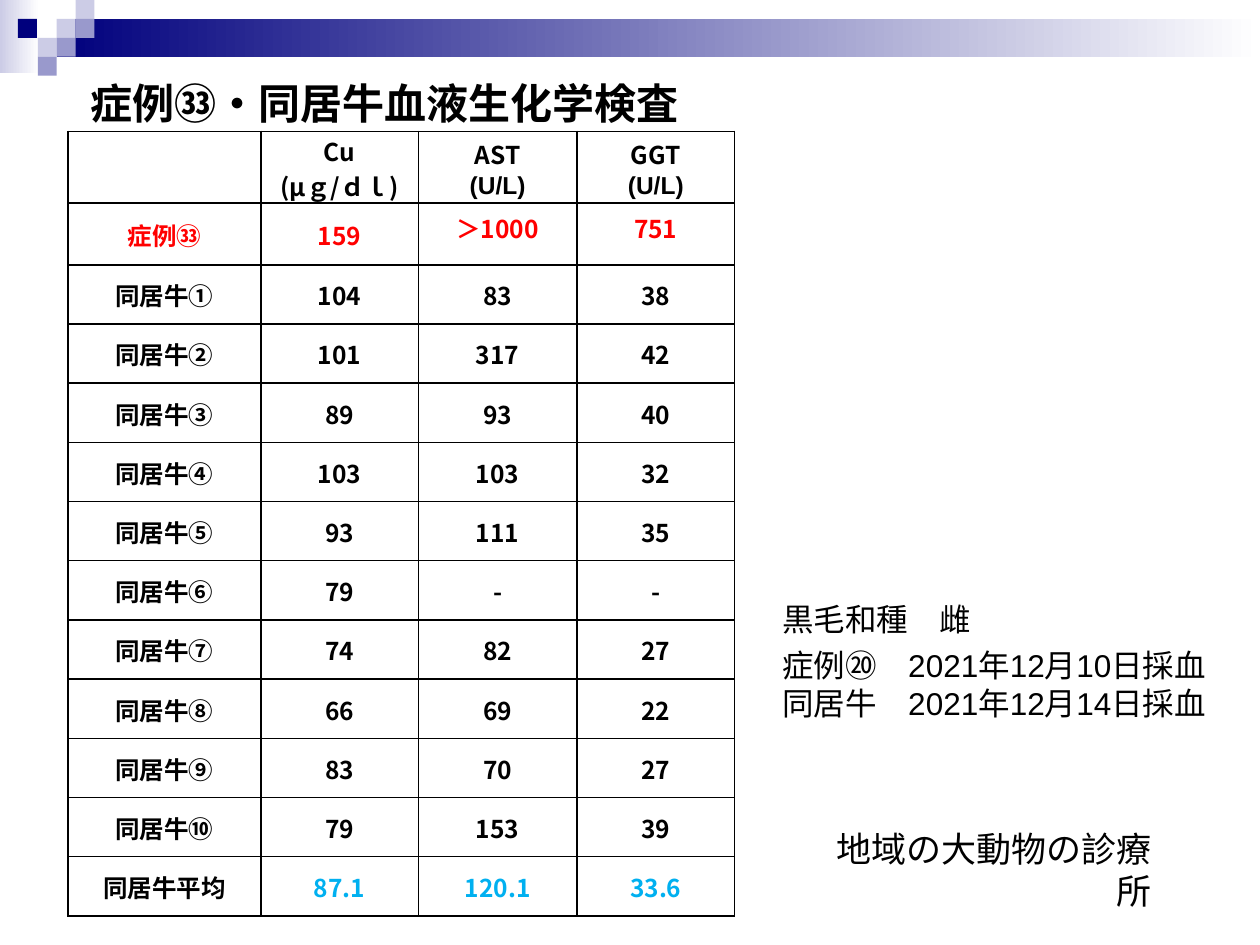
import pptx
import pptx.util
import pptx.dml.color
import pptx.enum.shapes
import pptx.enum.text
import pptx.oxml
import pptx.oxml.ns

COLORS = {"navy": "00007D", "violet": "9999CC", "lilac": "CCCCE6",
          "white": "FFFFFF", "black": "000000", "red": "FF0000", "blue": "00B0F0"}
CJK = "Noto Sans CJK JP"
ALIGN = pptx.enum.text.PP_ALIGN
ANCHOR = pptx.enum.text.MSO_ANCHOR

deck = pptx.Presentation()
deck.slide_width = pptx.util.Inches(10)
deck.slide_height = pptx.util.Inches(7.5)
page = deck.slides.add_slide(deck.slide_layouts[6])


def share(left, top, width, height):
    """Turn shares of the slide's size into lengths."""
    wide, high = deck.slide_width, deck.slide_height
    return int(left * wide), int(top * high), int(width * wide), int(height * high)


def write(frame, lines, size, color, align=ALIGN.LEFT, bold=False):
    """Fill a text frame with (text, latin font) lines."""
    for number, (text, font) in enumerate(lines):
        para = frame.add_paragraph() if number else frame.paragraphs[0]
        para.alignment = align
        span = para.add_run()
        span.text = text
        look = {"name": font, "size": pptx.util.Pt(size), "bold": bold}
        for key, value in look.items():
            setattr(span.font, key, value)
        span.font.color.rgb = pptx.dml.color.RGBColor.from_string(COLORS[color])
        east = pptx.oxml.parse_xml(
            f'<a:ea {pptx.oxml.ns.nsdecls("a")} typeface="{CJK}"/>')
        span.font._element.find(pptx.oxml.ns.qn("a:latin")).addnext(east)


# Header band and mosaic, on a grid of 0.15 inch: column, row, width, height, colours
TILE = pptx.util.Inches(0.15)
tiles = [
    (0, 0, 2.07, 3.87, ["lilac", "white"]),
    (3, 1, 63.67, 2, ["navy", "white"]),
    (3, 1, 1, 1, ["lilac"]),
    (4, 0, 1, 1, ["lilac"]),
    (4, 1, 1, 1, ["violet"]),
    (2, 2, 1, 1, ["lilac"]),
    (0.95, 1, 1, 1, ["navy"]),
    (3, 2, 1, 1, ["violet"]),
    (2, 3, 1, 1, ["violet"]),
]
for *cells, colors in tiles:
    box = page.shapes.add_shape(pptx.enum.shapes.MSO_SHAPE.RECTANGLE,
                                *(int(number * TILE) for number in cells))
    box.shadow.inherit = False
    box.line.fill.background()
    if len(colors) == 1:
        box.fill.solid()
        box.fill.fore_color.rgb = pptx.dml.color.RGBColor.from_string(COLORS[colors[0]])
    else:
        box.fill.gradient()
        box.fill.gradient_angle = 0
        for position, (stop, name) in enumerate(zip(box.fill.gradient_stops, colors)):
            stop.position = position
            stop.color.rgb = pptx.dml.color.RGBColor.from_string(COLORS[name])

# Title, sampling notes and clinic name
texts = [
    ((0.062, 0.075, 0.838, 0.067), ["症例㉝・同居牛血液生化学検査"],
     "Arial", 24, True, ALIGN.LEFT, ANCHOR.TOP),
    ((0.611, 0.628, 0.389, 0.053), ["黒毛和種　雌"],
     "Arial", 18, False, ALIGN.LEFT, ANCHOR.TOP),
    ((0.611, 0.677, 0.389, 0.175),
     ["症例⑳　2021年12月10日採血", "同居牛　2021年12月14日採血"],
     "Arial", 18, False, ALIGN.LEFT, ANCHOR.TOP),
    ((0.632, 0.904, 0.292, 0.067), ["地域の大動物の診療所"],
     CJK, 20, False, ALIGN.RIGHT, ANCHOR.BOTTOM),
]
for area, lines, font, size, bold, align, anchor in texts:
    box = page.shapes.add_textbox(*share(*area))
    box.text_frame.word_wrap = True
    box.text_frame.vertical_anchor = anchor
    write(box.text_frame, [(line, font) for line in lines], size, "black", align, bold)

# Blood chemistry table
results = [("症例㉝", "159", "＞1000", "751")]
herd = [("104", "83", "38"), ("101", "317", "42"), ("89", "93", "40"),
        ("103", "103", "32"), ("93", "111", "35"), ("79", "-", "-"),
        ("74", "82", "27"), ("66", "69", "22"), ("83", "70", "27"),
        ("79", "153", "39")]
results += [(f"同居牛{mark}", *values) for mark, values in zip("①②③④⑤⑥⑦⑧⑨⑩", herd)]
results.append(("同居牛平均", "87.1", "120.1", "33.6"))
header = [[], [("Cu", CJK), ("(μｇ/ｄｌ)", CJK)],
          [("AST", CJK), ("(U/L)", "Arial")], [("GGT", CJK), ("(U/L)", "Arial")]]
rows = [header] + [[[(text, CJK)] for text in result] for result in results]
last = len(rows) - 1

table = page.shapes.add_table(len(rows), 4, *share(0.054, 0.139, 0.529, 0.832)).table
table.first_row = table.horz_banding = False
for column, width in zip(table.columns, (1.53, 1.25, 1.26, 1.25)):
    column.width = pptx.util.Inches(width)
for row, height in zip(table.rows, [0.57, 0.49] + [0.47] * 11):
    row.height = pptx.util.Inches(height)

tight = {"vertical_anchor": ANCHOR.MIDDLE, "margin_left": pptx.util.Inches(0.01),
         "margin_right": pptx.util.Inches(0.01), "margin_top": pptx.util.Inches(0.01),
         "margin_bottom": 0}
for r, row in enumerate(rows):
    for c, lines in enumerate(row):
        cell = table.cell(r, c)
        if not (r == 1 and c >= 2):
            for key, value in tight.items():
                setattr(cell, key, value)
        color = "red" if r == 1 else "blue" if r == last and c else "black"
        write(cell.text_frame, lines, 14, color, ALIGN.CENTER, True)
        cell.fill.background()
        borders = cell._tc.get_or_add_tcPr()
        for place, side in enumerate("LRTB"):
            borders.insert(place, pptx.oxml.parse_xml(
                f'<a:ln{side} {pptx.oxml.ns.nsdecls("a")} w="12700"><a:solidFill>'
                f'<a:srgbClr val="{COLORS["black"]}"/></a:solidFill></a:ln{side}>'))

deck.save("out.pptx")
